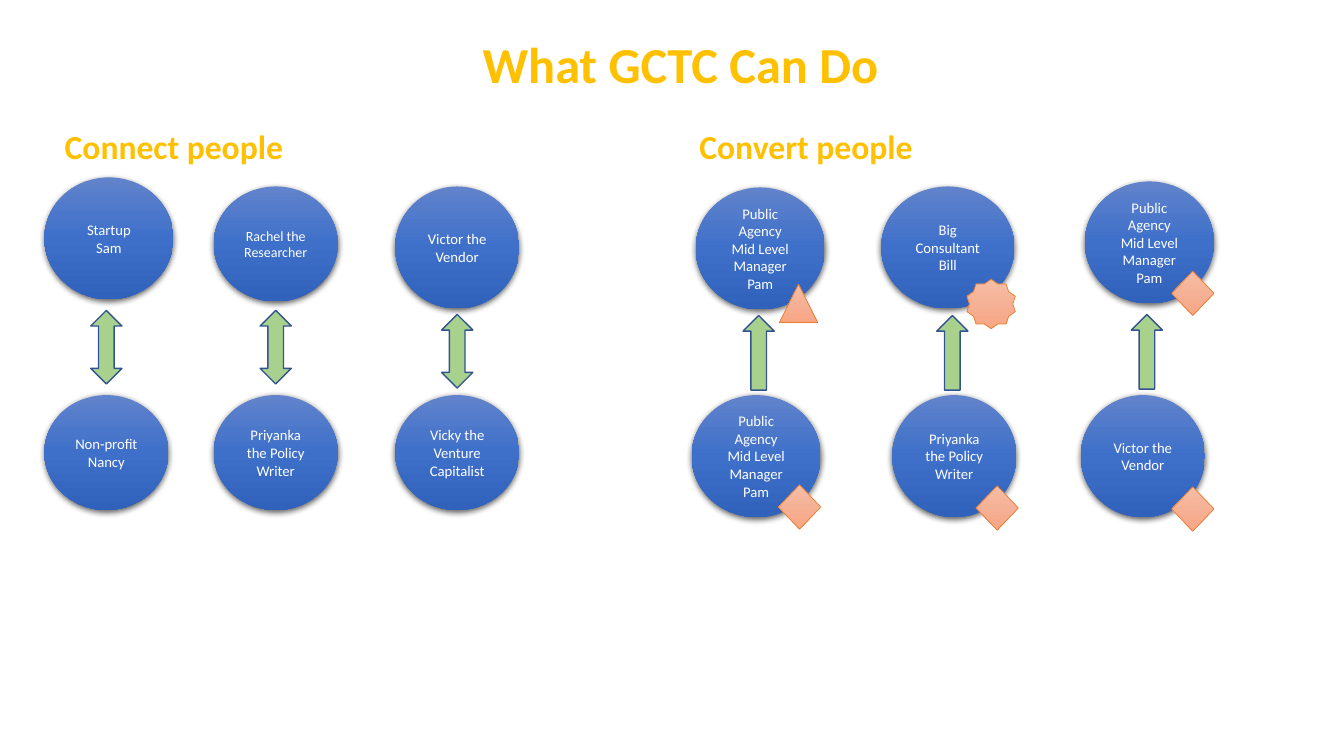
import copy
import pptx
import pptx.dml.color
import pptx.enum.shapes
import pptx.enum.text
import pptx.oxml
import pptx.oxml.ns
import pptx.util

RGB = pptx.dml.color.RGBColor
SHAPE = pptx.enum.shapes.MSO_SHAPE
ANCHOR = pptx.enum.text.MSO_ANCHOR

GOLD = RGB(0xFF, 0xC0, 0x00)
WHITE = RGB(0xFF, 0xFF, 0xFF)
GREEN = RGB(0xA9, 0xD1, 0x8E)
NAVY = RGB(0x32, 0x54, 0x91)
ORANGE = RGB(0xED, 0x7D, 0x31)
BLUES = (RGB(0x61, 0x83, 0xCB), RGB(0x3E, 0x70, 0xCA), RGB(0x30, 0x62, 0xBB))
PEACHES = (RGB(0xF7, 0xBD, 0xA5), RGB(0xF5, 0xB1, 0x96), RGB(0xF8, 0xA5, 0x82))

EMU_PER_PX = 9144
FONT = "Calibri"
MANAGER = ("Public Agency", "Mid Level Manager Pam")
SHADOW = (
    '<a:outerShdw xmlns:a="http://schemas.openxmlformats.org/drawingml/2006/main" '
    'blurRad="57150" dist="19050" dir="5400000" algn="ctr" rotWithShape="0">'
    '<a:srgbClr val="000000"><a:alpha val="63000"/></a:srgbClr></a:outerShdw>'
)

CONNECT_CIRCLES = (
    ((44, 176, 128, 121), ("Startup Sam",), 10.5),
    ((44, 392, 123, 114), ("Non-profit Nancy",), 10.5),
    ((212, 185, 123, 114), ("Rachel the Researcher",), 10),
    ((212, 392, 123, 114), ("Priyanka the Policy Writer",), 10.5),
    ((392, 185, 123, 121), ("Victor the Vendor",), 10.5),
    ((392, 392, 123, 114), ("Vicky the Venture Capitalist",), 10.5),
)
CONVERT_CIRCLES = (
    ((690, 186, 128, 121), MANAGER, 10.5),
    ((686, 392, 128, 121), MANAGER, 10.5),
    ((874, 185, 132, 121), ("Big Consultant Bill",), 10.5),
    ((885, 392, 123, 121), ("Priyanka the Policy Writer",), 10.5),
    ((1076, 180, 128, 121), MANAGER, 10.5),
    ((1072, 392, 123, 121), ("Victor the Vendor",), 10.5),
)
CONNECT_ARROWS = ((90, 308), (258, 308), (438, 312))
CONVERT_ARROWS = ((737, 313), (929, 313), (1122, 312))
BADGES = (
    (SHAPE.ISOSCELES_TRIANGLE, (773, 282, 38, 38)),
    (SHAPE.STAR_10_POINT, (959, 277, 48, 49)),
    (SHAPE.DIAMOND, (1162, 269, 42, 44)),
    (SHAPE.DIAMOND, (772, 481, 42, 44)),
    (SHAPE.DIAMOND, (968, 482, 42, 44)),
    (SHAPE.DIAMOND, (1162, 483, 42, 44)),
)


def px(length):
    return pptx.util.Emu(length * EMU_PER_PX)


class PeopleSlide:
    def __init__(self, deck):
        self.page = deck.slides.add_slide(deck.slide_layouts[5])

    def fill_text(self, shape, lines, size, color, bold, anchor):
        frame = shape.text_frame
        frame.word_wrap = True
        frame.vertical_anchor = anchor
        for index, line in enumerate(lines):
            para = frame.add_paragraph() if index else frame.paragraphs[0]
            para.alignment = pptx.enum.text.PP_ALIGN.CENTER
            span = para.add_run()
            span.text = line
            span.font.name = FONT
            span.font.size = pptx.util.Pt(size)
            span.font.bold = bold
            span.font.color.rgb = color

    def banner(self, box, line, size):
        self.fill_text(box, (line,), size, GOLD, True, ANCHOR.TOP)
        box.text_frame.auto_size = pptx.enum.text.MSO_AUTO_SIZE.SHAPE_TO_FIT_TEXT

    def title(self, place, line):
        box = self.page.shapes.title
        box.left, box.top, box.width, box.height = map(px, place)
        self.banner(box, line, 36)

    def heading(self, place, line):
        self.banner(self.page.shapes.add_textbox(*map(px, place)), line, 24)

    def shape(self, kind, place, line_color=None, line_width=0):
        shape = self.page.shapes.add_shape(kind, *map(px, place))
        shape.shadow.inherit = False
        if line_color is None:
            shape.line.fill.background()
        else:
            shape.line.color.rgb = line_color
            shape.line.width = pptx.util.Pt(line_width)
        return shape

    def shade(self, shape, colors):
        shape.fill.gradient()
        shape.fill.gradient_angle = 270
        stops = shape.element.spPr.find(".//" + pptx.oxml.ns.qn("a:gsLst"))
        stops.insert(1, copy.deepcopy(stops[0]))
        for stop, position, color in zip(shape.fill.gradient_stops, (0, 0.5, 1), colors):
            stop.position = position
            stop.color.rgb = color

    def circle(self, place, lines, size):
        circle = self.shape(SHAPE.OVAL, place)
        self.shade(circle, BLUES)
        effects = circle.element.spPr.find(pptx.oxml.ns.qn("a:effectLst"))
        effects.append(pptx.oxml.parse_xml(SHADOW))
        self.fill_text(circle, lines, size, WHITE, False, ANCHOR.MIDDLE)

    def arrow(self, kind, left, top, height, rotation=0):
        arrow = self.shape(kind, (left, top, 31, height), NAVY, 1)
        arrow.fill.solid()
        arrow.fill.fore_color.rgb = GREEN
        arrow.rotation = rotation

    def badge(self, kind, place):
        self.shade(self.shape(kind, place, ORANGE, 0.5), PEACHES)


def main():
    deck = pptx.Presentation()
    deck.slide_width, deck.slide_height = px(1333), px(750)
    people = PeopleSlide(deck)
    people.title((16, 28, 1318, 71), "What GCTC Can Do")
    people.heading((24, 120, 297, 50), "Connect people")
    people.heading((651, 120, 297, 50), "Convert people")
    for place, lines, size in CONNECT_CIRCLES + CONVERT_CIRCLES:
        people.circle(place, lines, size)
    for left, top in CONNECT_ARROWS:
        people.arrow(SHAPE.UP_DOWN_ARROW, left, top, 73)
    for left, top in CONVERT_ARROWS:
        people.arrow(SHAPE.DOWN_ARROW, left, top, 74, 180)
    for kind, place in BADGES:
        people.badge(kind, place)
    deck.save("out.pptx")


if __name__ == "__main__":
    main()
